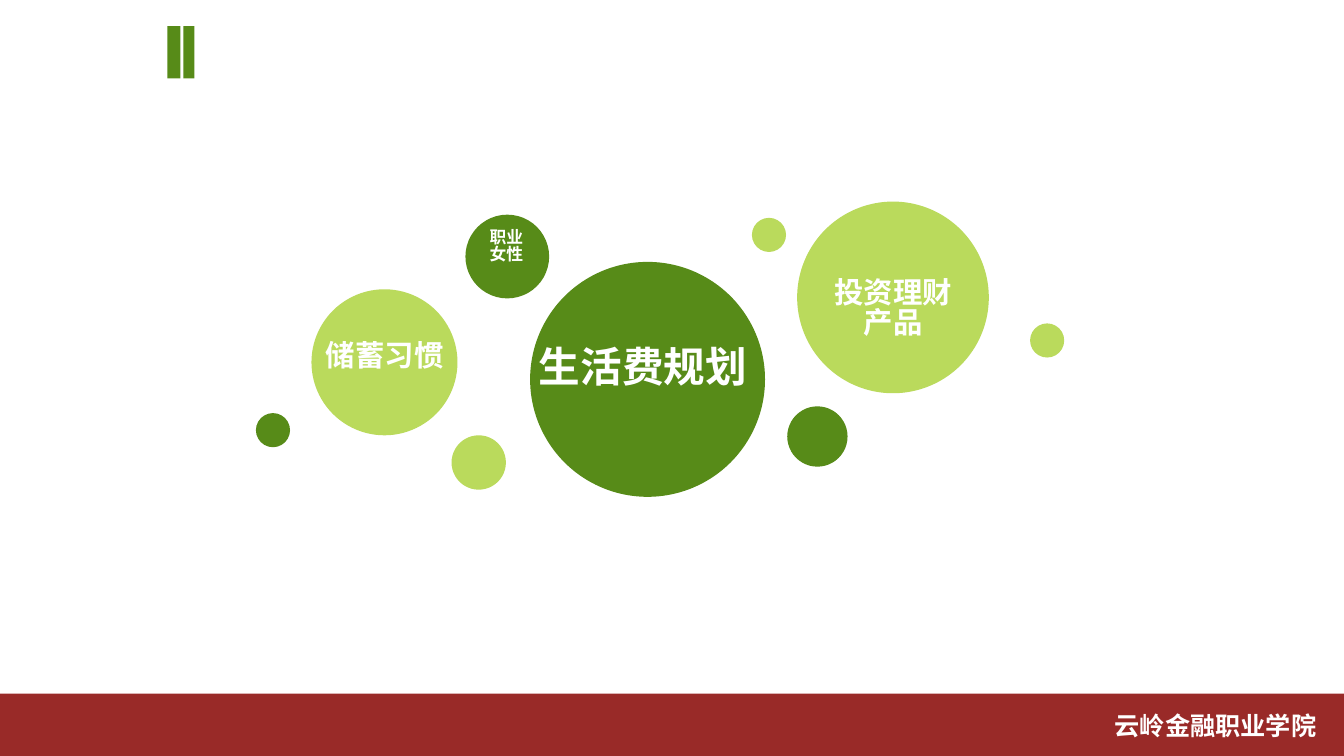
from dataclasses import dataclass

from lxml import etree
from pptx import Presentation
from pptx.dml.color import RGBColor
from pptx.enum.shapes import MSO_SHAPE
from pptx.enum.text import PP_ALIGN
from pptx.oxml.ns import qn
from pptx.slide import Slide
from pptx.util import Cm, Pt

RECTANGLE, OVAL = MSO_SHAPE.RECTANGLE, MSO_SHAPE.OVAL
CENTER, RIGHT = PP_ALIGN.CENTER, PP_ALIGN.RIGHT

GREEN, LIME, RED, WHITE = "578B18", "BADA5C", "992A28", "FFFFFF"
FONT = "Noto Sans CJK SC"
LINE_SPACING = 0.86
SLIDE_WIDTH, SLIDE_HEIGHT = 33.87, 19.05
FOOTER_TOP = 17.48


@dataclass
class Block:
    left: float
    top: float
    width: float
    height: float
    color: str


@dataclass
class Bubble:
    left: float
    top: float
    diameter: float
    color: str


@dataclass
class Label:
    left: float
    top: float
    width: float
    height: float
    size: float
    lines: list[str]
    align: PP_ALIGN = CENTER


FOOTER_BAND = Block(0, FOOTER_TOP, SLIDE_WIDTH, SLIDE_HEIGHT - FOOTER_TOP, RED)
SCHOOL = Label(21.41, 17.88, 12.01, 1.8, 18, ["云岭金融职业学院"], RIGHT)

BUBBLES = [
    Bubble(13.36, 6.6, 5.92, GREEN),
    Bubble(7.85, 7.29, 3.68, LIME),
    Bubble(20.09, 5.08, 4.83, LIME),
    Bubble(11.38, 10.97, 1.37, LIME),
    Bubble(11.73, 5.41, 2.11, GREEN),
    Bubble(18.95, 5.49, 0.86, LIME),
    Bubble(19.84, 10.24, 1.52, GREEN),
    Bubble(6.45, 10.41, 0.86, GREEN),
    Bubble(25.96, 8.15, 0.86, LIME),
]

TOPICS = [
    Label(7.7, 8.51, 3.99, 1.32, 21, ["储蓄习惯"]),
    Label(13.08, 8.66, 6.25, 1.9, 29.7, ["生活费规划"]),
    Label(20.52, 6.91, 3.99, 2.11, 21, ["投资理财产品"]),
    Label(11.48, 5.66, 2.57, 1.85, 12, ["职业", "女性"]),
]

TITLE_BARS = [
    Block(4.22, 0.66, 0.33, 1.32, GREEN),
    Block(4.62, 0.66, 0.28, 1.32, GREEN),
]


def rgb(color: str) -> RGBColor:
    return RGBColor.from_string(color)


def draw_block(slide: Slide, block: Block, outline: MSO_SHAPE = RECTANGLE) -> None:
    shape = slide.shapes.add_shape(
        outline, Cm(block.left), Cm(block.top), Cm(block.width), Cm(block.height))
    shape.shadow.inherit = False
    shape.fill.solid()
    shape.fill.fore_color.rgb = rgb(block.color)
    shape.line.fill.background()


def draw_bubble(slide: Slide, bubble: Bubble) -> None:
    size = bubble.diameter
    draw_block(slide, Block(bubble.left, bubble.top, size, size, bubble.color), OVAL)


def draw_label(slide: Slide, label: Label) -> None:
    frame = slide.shapes.add_textbox(
        Cm(label.left), Cm(label.top), Cm(label.width), Cm(label.height)).text_frame
    frame.word_wrap = True
    frame.text = "\n".join(label.lines)
    font_format = {"size": Pt(label.size), "bold": True, "name": FONT}
    for paragraph in frame.paragraphs:
        paragraph.alignment = label.align
        paragraph.line_spacing = LINE_SPACING
        run = paragraph.runs[0]
        for attribute, value in font_format.items():
            setattr(run.font, attribute, value)
        run.font.color.rgb = rgb(WHITE)
        # Chinese characters take the East Asian typeface
        etree.SubElement(run.font._element, qn("a:ea"), typeface=FONT)


def main() -> None:
    prs = Presentation()
    prs.slide_width, prs.slide_height = Cm(SLIDE_WIDTH), Cm(SLIDE_HEIGHT)
    slide = prs.slides.add_slide(prs.slide_layouts[6])

    # Footer with the school name
    draw_block(slide, FOOTER_BAND)
    draw_label(slide, SCHOOL)

    # Bubbles and their topics
    for bubble in BUBBLES:
        draw_bubble(slide, bubble)
    for topic in TOPICS:
        draw_label(slide, topic)

    # Title marker
    for bar in TITLE_BARS:
        draw_block(slide, bar)

    prs.save("out.pptx")


if __name__ == "__main__":
    main()
